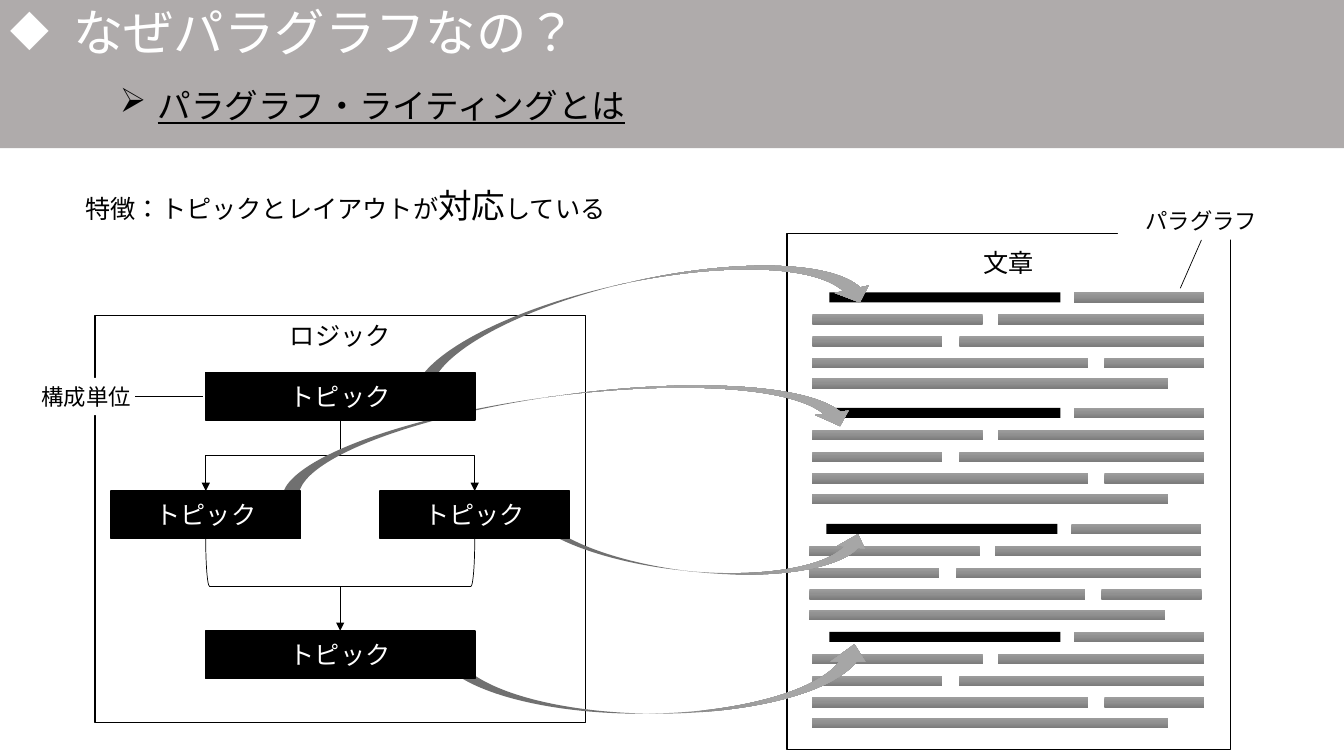
from lxml import etree
from pptx import Presentation
from pptx.dml.color import RGBColor
from pptx.enum.shapes import MSO_CONNECTOR, MSO_SHAPE
from pptx.enum.text import MSO_ANCHOR, MSO_AUTO_SIZE, PP_ALIGN
from pptx.oxml import parse_xml
from pptx.oxml.ns import nsdecls, qn
from pptx.util import Pt

RECT, BRACKET = MSO_SHAPE.RECTANGLE, MSO_SHAPE.RIGHT_BRACKET
DOWN, UP = MSO_SHAPE.CURVED_DOWN_ARROW, MSO_SHAPE.CURVED_UP_ARROW
STRAIGHT, ELBOW = MSO_CONNECTOR.STRAIGHT, MSO_CONNECTOR.ELBOW
TOP, MIDDLE = MSO_ANCHOR.TOP, MSO_ANCHOR.MIDDLE
LEFT, CENTER = PP_ALIGN.LEFT, PP_ALIGN.CENTER
NO_FIT = MSO_AUTO_SIZE.NONE

JP, ARIAL = "Noto Sans CJK JP", "Arial"
COLORS = {"black": "000000", "white": "FFFFFF", "band": "AFABAB"}
GRADIENTS = {
    "bar": (90, [(0, "9D9D9D"), (50, "909090"), (100, "7C7C7C")]),
    "arrow": (315, [(29, "8C8C8C"), (53, "8C8C8C"), (61, "999999"), (71, "A6A6A6")]),
}

PARAGRAPHS = [(580.2, 208.8), (580.2, 291.4), (578.1, 374.2), (580.2, 451.3)]
ROW_OFFSETS = [0, 15.6, 31.3, 46.7, 61.3]
ROW_BARS = [
    [(12.2, 165), (187.1, 93)],
    [(0, 121.7), (132.5, 147.6)],
    [(0, 92.9), (105.1, 175)],
    [(0, 197.3), (208.6, 71.6)],
    [(0, 254.2)],
]
TOPICS = [(146.7, 266, 192.5), (79.3, 350.8, 135.5),
          (271.4, 350.8, 135.5), (146.7, 450.6, 192.5)]
ARROWS = [
    (DOWN, (286.6, 200.9, 338.4, 49.7), 347.5, 0.212),
    (DOWN, (196.6, 282.2, 414, 48.2), 352.4, 0.212),
    (UP, (368.6, 368.6, 252.7, 39.6), 6.3, 0.25),
    (UP, (311, 460.1, 311.8, 49.7), 0, 0.25),
]


def rgb(name):
    """Return the named colour."""
    return RGBColor.from_string(COLORS[name])


def add_box(s, kind, at, fill=None, line=None, width=1):
    """Add a preset shape with a solid, gradient or empty fill."""
    sp = s.shapes.add_shape(kind, *map(Pt, at))
    sp.shadow.inherit = False
    if line:
        sp.line.color.rgb = rgb(line)
        sp.line.width = Pt(width)
    else:
        sp.line.fill.background()
    if fill in GRADIENTS:
        add_gradient(sp, *GRADIENTS[fill])
    elif fill:
        sp.fill.solid()
        sp.fill.fore_color.rgb = rgb(fill)
    else:
        sp.fill.background()
    return sp


def add_gradient(sp, angle, stops):
    """Give a shape a linear gradient."""
    gs = "".join(f'<a:gs pos="{pos * 1000}"><a:srgbClr val="{color}"/></a:gs>'
                 for pos, color in stops)
    xml = (f'<a:gradFill {nsdecls("a")} rotWithShape="1"><a:gsLst>{gs}</a:gsLst>'
           f'<a:lin ang="{angle * 60000}" scaled="0"/></a:gradFill>')
    sp._element.spPr.find(qn("a:prstGeom")).addnext(parse_xml(xml))


def set_text(sp, runs, color="black", font=JP, align=LEFT, anchor=TOP, inset=3.6,
             underline=None):
    """Fill a shape with one paragraph of (text, size) runs."""
    tf = sp.text_frame
    frame = {"word_wrap": True, "auto_size": NO_FIT, "vertical_anchor": anchor,
             "margin_top": Pt(inset), "margin_bottom": Pt(3.6)}
    for name, value in frame.items():
        setattr(tf, name, value)
    p = tf.paragraphs[0]
    p.alignment = align
    for text, size in runs:
        r = p.add_run()
        r.text = text
        style = {"size": Pt(size), "name": font, "underline": underline}
        for name, value in style.items():
            setattr(r.font, name, value)
        r.font.color.rgb = rgb(color)
        rPr = r._r.get_or_add_rPr()
        rPr.set("lang", "ja-JP")
        if font == JP:
            etree.SubElement(rPr, qn("a:ea"), typeface=JP)
    return p


def add_bullet(p, char, indent, color):
    """Give a paragraph a hanging bullet."""
    pPr = p._p.get_or_add_pPr()
    pPr.set("marL", str(Pt(indent)))
    pPr.set("indent", str(-Pt(indent)))
    buClr = etree.SubElement(pPr, qn("a:buClr"))
    etree.SubElement(buClr, qn("a:srgbClr"), val=COLORS[color])
    etree.SubElement(pPr, qn("a:buChar"), char=char)


def add_line(s, start, end, kind=STRAIGHT, arrow=False):
    """Add a thin black connector."""
    c = s.shapes.add_connector(kind, *map(Pt, (*start, *end)))
    c.line.color.rgb = rgb("black")
    c.line.width = Pt(0.5)
    if arrow:
        etree.SubElement(c.line._get_or_add_ln(), qn("a:tailEnd"), type="triangle")
    etree.SubElement(c._element.spPr, qn("a:effectLst"))
    return c


def add_branch(s, start, end):
    """Add an elbow arrow that leaves downwards and arrives downwards."""
    (x1, y1), (x2, y2) = start, end
    cx, cy = (x1 + x2) / 2, (y1 + y2) / 2
    side = 1 if x2 > x1 else -1
    dx, dy = side * (y2 - y1) / 2, abs(x2 - x1) / 2
    c = add_line(s, (cx + dx, cy - dy), (cx - dx, cy + dy), ELBOW, True)
    c._element.spPr.get_or_add_xfrm().rot = 270 if side > 0 else 90


def add_textbox(s, at, runs, **style):
    """Add a text box with one paragraph."""
    return set_text(s.shapes.add_textbox(*map(Pt, at)), runs, **style)


def add_header(s):
    """Format the title band and add its subtitle."""
    title = s.shapes.title
    box = {"left": 0, "top": 0, "width": 960, "height": 105.8}
    for name, value in box.items():
        setattr(title, name, Pt(value))
    title.fill.solid()
    title.fill.fore_color.rgb = rgb("band")
    p = set_text(title, [("なぜパラグラフなの？", 36)], "white", inset=6)
    p.line_spacing = 0.9
    add_bullet(p, "◆", 45, "white")
    p = add_textbox(s, (78.5, 56.9, 377.3, 36), [("パラグラフ・ライティングとは", 24)],
                    underline=True)
    add_bullet(p, "➢", 27, "black")


def add_document(s):
    """Draw the document page with its paragraphs of bars."""
    page = add_box(s, RECT, (562.3, 166.6, 316.8, 368.6), line="black")
    set_text(page, [("文章", 18)], font=ARIAL, align=CENTER, inset=10)
    for x, y in PARAGRAPHS:
        for dy, bars in zip(ROW_OFFSETS, ROW_BARS):
            for dx, width in bars:
                fill = "black" if (dx, dy) == (12.2, 0) else "bar"
                add_box(s, RECT, (x + dx, y + dy, width, 7.2), fill)


def add_label(s, at, text):
    """Add a white callout label."""
    set_text(add_box(s, RECT, at, "white"), [(text, 16)], align=CENTER)


def main():
    """Build the slide and save it."""
    prs = Presentation()
    prs.slide_width, prs.slide_height = Pt(960), Pt(540)
    s = prs.slides.add_slide(prs.slide_layouts[5])
    add_header(s)
    logic = add_box(s, RECT, (67.8, 225.5, 350.6, 290.8), line="black")
    set_text(logic, [("ロジック", 18)], font=ARIAL, align=CENTER)
    add_document(s)
    for x in (147, 339.1):
        add_branch(s, (243, 300), (x, 350.8))
    bracket = add_box(s, BRACKET, (226.1, 306, 33.8, 192.2), line="black", width=0.5)
    bracket.rotation = 90
    add_line(s, (243, 419), (243, 450.6), arrow=True)
    add_textbox(s, (54, 128.2, 401.8, 36),
                [("特徴：トピックとレイアウトが", 18), ("対応", 24), ("している", 18)])
    for kind, at, rotation, head in ARROWS:
        arrow = add_box(s, kind, at, "arrow")
        arrow.rotation = rotation
        arrow.adjustments[2] = head
    add_label(s, (6.5, 270, 110.2, 26.6), "構成単位")
    add_line(s, (96.5, 283), (144.7, 283))
    add_label(s, (798.5, 144.7, 119.5, 26.6), "パラグラフ")
    add_line(s, (843.1, 205.9), (858.2, 171.4))
    for x, y, width in TOPICS:
        topic = add_box(s, RECT, (x, y, width, 34), "black", "black")
        set_text(topic, [("トピック", 18)], "white", ARIAL, CENTER, MIDDLE)
    prs.save("out.pptx")


if __name__ == "__main__":
    main()
